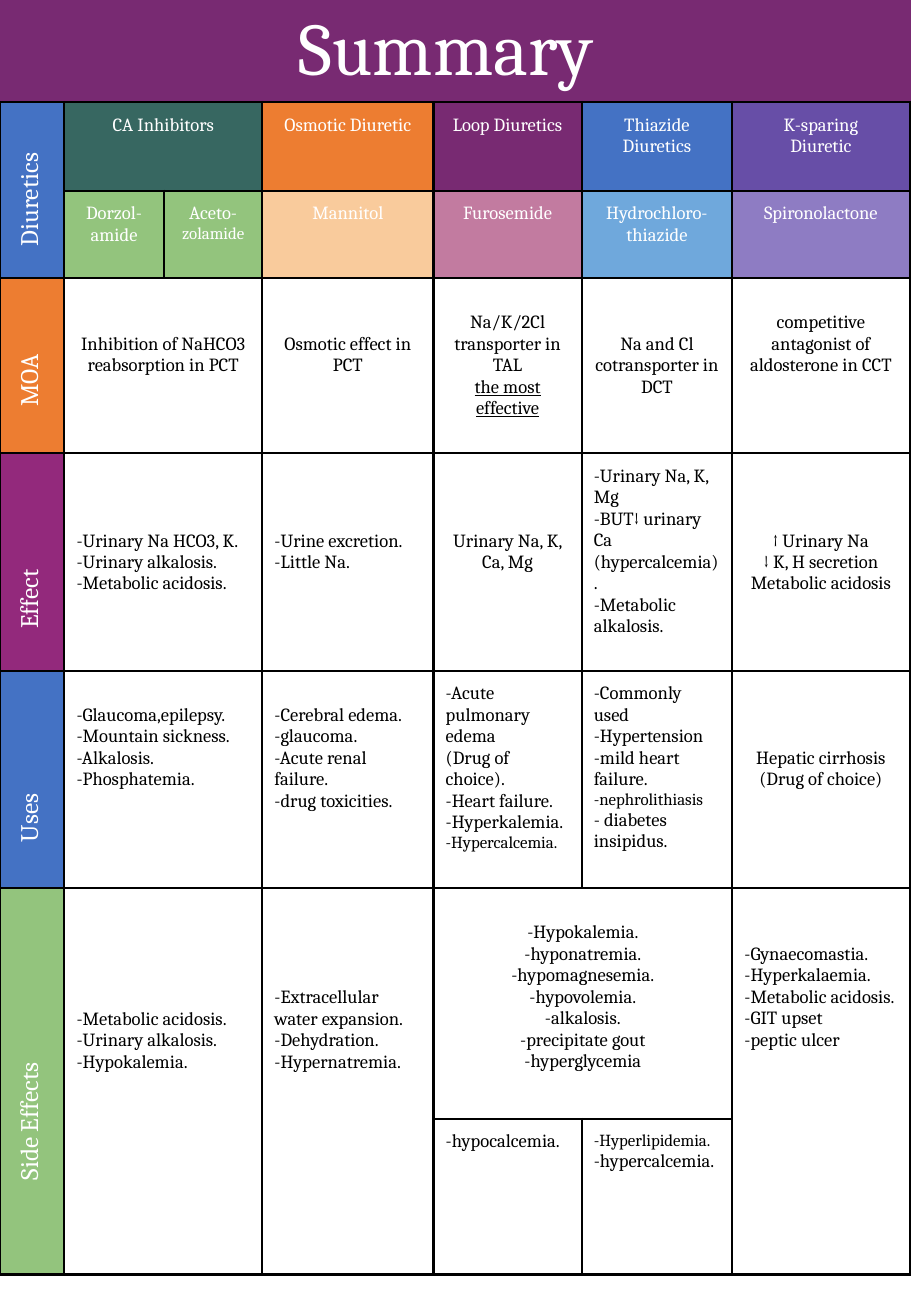
from lxml import etree
from pptx import Presentation
from pptx.dml.color import RGBColor
from pptx.enum.shapes import MSO_SHAPE
from pptx.enum.text import MSO_ANCHOR, PP_ALIGN
from pptx.oxml.ns import qn
from pptx.util import Inches, Pt

CENTER, LEFT = PP_ALIGN.CENTER, PP_ALIGN.LEFT
MIDDLE = MSO_ANCHOR.MIDDLE
RECTANGLE = MSO_SHAPE.RECTANGLE
FONT = "Cambria"
LINE_HEIGHT = 0.178
INSET = 0.1
TITLE_HEIGHT = 0.84
COLORS = {
    "white": "FFFFFF", "black": "000000", "blue": "4472C4", "teal": "376761",
    "orange": "ED7D31", "plum": "782A72", "violet": "674EA7", "green": "93C47D",
    "peach": "F9CB9C", "pink": "C27BA0", "sky": "6FA8DC", "lilac": "8E7CC3",
    "magenta": "93297C",
}
COLUMNS = [0.53, 0.82, 0.81, 1.41, 1.22, 1.24, 1.46]
ROWS = [0.73, 0.72, 1.44, 1.79, 1.79, 1.9, 1.28]
SMALL_LINES = {"zolamide", "-Hypercalcemia.", "-nephrolithiasis", "-Hyperlipidemia."}
UNDERLINED_LINE = "the most effective"

# Merged areas: first row, first column, last row, last column
MERGES = [(0, 0, 1, 0), (0, 1, 0, 2), (2, 1, 2, 2), (3, 1, 3, 2), (4, 1, 4, 2),
          (5, 0, 6, 0), (5, 1, 6, 2), (5, 3, 6, 3), (5, 4, 5, 5), (5, 6, 6, 6)]

# Coloured cells: (row, column): fill, text
COLORED_CELLS = {
    (0, 0): ("blue", ""),
    (0, 1): ("teal", "CA Inhibitors"),
    (0, 3): ("orange", "Osmotic Diuretic"),
    (0, 4): ("plum", "Loop Diuretics"),
    (0, 5): ("blue", "Thiazide\nDiuretics"),
    (0, 6): ("violet", "K-sparing\nDiuretic"),
    (1, 1): ("green", "Dorzol-\namide"),
    (1, 2): ("green", "Aceto-\nzolamide"),
    (1, 3): ("peach", "Mannitol"),
    (1, 4): ("pink", "Furosemide"),
    (1, 5): ("sky", "Hydrochloro-\nthiazide"),
    (1, 6): ("lilac", "Spironolactone"),
    (2, 0): ("orange", ""),
    (3, 0): ("magenta", ""),
    (4, 0): ("blue", ""),
    (5, 0): ("green", ""),
}

# White cells: (row, column): alignment, lines of space above, text
BODY_CELLS = {
    (2, 1): (CENTER, 2, "Inhibition of NaHCO3\nreabsorption in PCT"),
    (2, 3): (CENTER, 2, "Osmotic effect in PCT"),
    (2, 4): (CENTER, 1, "Na/K/2Cl\ntransporter in TAL\nthe most effective"),
    (2, 5): (CENTER, 2, "Na and Cl\ncotransporter in DCT"),
    (2, 6): (CENTER, 1, "competitive\nantagonist of aldosterone in CCT"),
    (3, 1): (LEFT, 3, "-Urinary Na HCO3, K.\n-Urinary alkalosis.\n-Metabolic acidosis."),
    (3, 3): (LEFT, 3, "-Urine excretion.\n-Little Na."),
    (3, 4): (CENTER, 3, "Urinary Na, K, Ca, Mg"),
    (3, 5): (LEFT, 0, "-Urinary Na, K, Mg\n-BUT↓ urinary Ca\n(hypercalcemia).\n"
                      "-Metabolic alkalosis."),
    (3, 6): (CENTER, 3, "↑ Urinary Na\n↓ K, H secretion\nMetabolic acidosis"),
    (4, 1): (LEFT, 1, "-Glaucoma,epilepsy.\n-Mountain sickness.\n-Alkalosis.\n-Phosphatemia."),
    (4, 3): (LEFT, 1, "-Cerebral edema. -glaucoma.\n-Acute renal failure.\n-drug toxicities."),
    (4, 4): (LEFT, 0, "-Acute pulmonary edema\n(Drug of\nchoice).\n-Heart failure.\n"
                      "-Hyperkalemia.\n-Hypercalcemia."),
    (4, 5): (LEFT, 0, "-Commonly used\n-Hypertension\n-mild heart failure.\n"
                      "-nephrolithiasis\n- diabetes insipidus."),
    (4, 6): (CENTER, 3, "Hepatic cirrhosis\n(Drug of choice)"),
    (5, 1): (LEFT, 5, "-Metabolic acidosis.\n-Urinary alkalosis.\n-Hypokalemia."),
    (5, 3): (LEFT, 4, "-Extracellular water expansion.\n-Dehydration.\n-Hypernatremia."),
    (5, 4): (CENTER, 1, "-Hypokalemia.\n-hyponatremia.\n-hypomagnesemia.\n-hypovolemia.\n"
                        "-alkalosis.\n-precipitate gout\n-hyperglycemia"),
    (5, 6): (LEFT, 2, "-Gynaecomastia.\n-Hyperkalaemia.\n-Metabolic acidosis.\n"
                      "-GIT upset\n-peptic ulcer"),
    (6, 4): (LEFT, 0, "-hypocalcemia."),
    (6, 5): (LEFT, 0, "-Hyperlipidemia.\n-hypercalcemia."),
}

# Row labels: text, alignment, box length, vertical centre
ROW_LABELS = [
    ("Diuretics", LEFT, 1.11, 1.57),
    ("MOA", CENTER, 1.11, 3.13),
    ("Effect", CENTER, 1.11, 4.93),
    ("Uses", CENTER, 1.66, 6.73),
    ("Side Effects", CENTER, 1.66, 9.23),
]


def write_text(text_frame, text, size, color, alignment):
    text_frame.text = text
    for paragraph in text_frame.paragraphs:
        paragraph.alignment = alignment
        for run in paragraph.runs:
            run.font.name = FONT
            run.font.size = Pt(10 if run.text in SMALL_LINES else size)
            run.font.color.rgb = RGBColor.from_string(COLORS[color])
            if run.text == UNDERLINED_LINE:
                run.font.underline = True


def add_borders(cell):
    properties = cell._tc.get_or_add_tcPr()
    for side in ("a:lnL", "a:lnR", "a:lnT", "a:lnB"):
        line = etree.SubElement(properties, qn(side), w=str(Pt(1.5)))
        fill = etree.SubElement(line, qn("a:solidFill"))
        etree.SubElement(fill, qn("a:srgbClr"), val=COLORS["black"])


presentation = Presentation()
presentation.slide_width = Inches(7.5)
presentation.slide_height = Inches(10.83)
slide = presentation.slides.add_slide(presentation.slide_layouts[6])

# Title band
title = slide.shapes.add_shape(RECTANGLE, 0, 0, presentation.slide_width, Inches(TITLE_HEIGHT))
title.shadow.inherit = False
title.fill.solid()
title.fill.fore_color.rgb = RGBColor.from_string(COLORS["plum"])
title.line.fill.background()
title.text_frame.vertical_anchor = MIDDLE
title.text_frame.margin_right = Inches(0.25)
write_text(title.text_frame, "Summary", 44, "white", CENTER)
title.text_frame.paragraphs[0].line_spacing = 0.9

# Table grid
table = slide.shapes.add_table(len(ROWS), len(COLUMNS), 0, Inches(TITLE_HEIGHT),
                               Inches(sum(COLUMNS)), Inches(sum(ROWS))).table
table.first_row = False
table.horz_banding = False
for column, width in zip(table.columns, COLUMNS):
    column.width = Inches(width)
for row, height in zip(table.rows, ROWS):
    row.height = Inches(height)
for top, left, bottom, right in MERGES:
    table.cell(top, left).merge(table.cell(bottom, right))

# Cell borders, fills and text
for row in range(len(ROWS)):
    for column in range(len(COLUMNS)):
        cell = table.cell(row, column)
        add_borders(cell)
        cell.margin_left = cell.margin_right = Inches(INSET)
        cell.margin_top = cell.margin_bottom = Inches(INSET)
        if (row, column) in COLORED_CELLS:
            fill_color, text = COLORED_CELLS[row, column]
            cell.fill.solid()
            cell.fill.fore_color.rgb = RGBColor.from_string(COLORS[fill_color])
            write_text(cell.text_frame, text, 11, "white", CENTER)
        else:
            cell.fill.background()
        if (row, column) in BODY_CELLS:
            alignment, lines_above, text = BODY_CELLS[row, column]
            cell.margin_top = Inches(INSET + lines_above * LINE_HEIGHT)
            write_text(cell.text_frame, text, 11, "black", alignment)

# Rotated row labels
LABEL_CENTER, LABEL_HEIGHT = 0.24, 0.47
for text, alignment, length, middle in ROW_LABELS:
    label = slide.shapes.add_textbox(Inches(LABEL_CENTER - length / 2),
                                     Inches(middle - LABEL_HEIGHT / 2),
                                     Inches(length), Inches(LABEL_HEIGHT))
    label.rotation = 270
    label.text_frame.word_wrap = True
    label.text_frame.margin_top = label.text_frame.margin_bottom = Inches(INSET)
    write_text(label.text_frame, text, 15, "white", alignment)

presentation.save("out.pptx")
